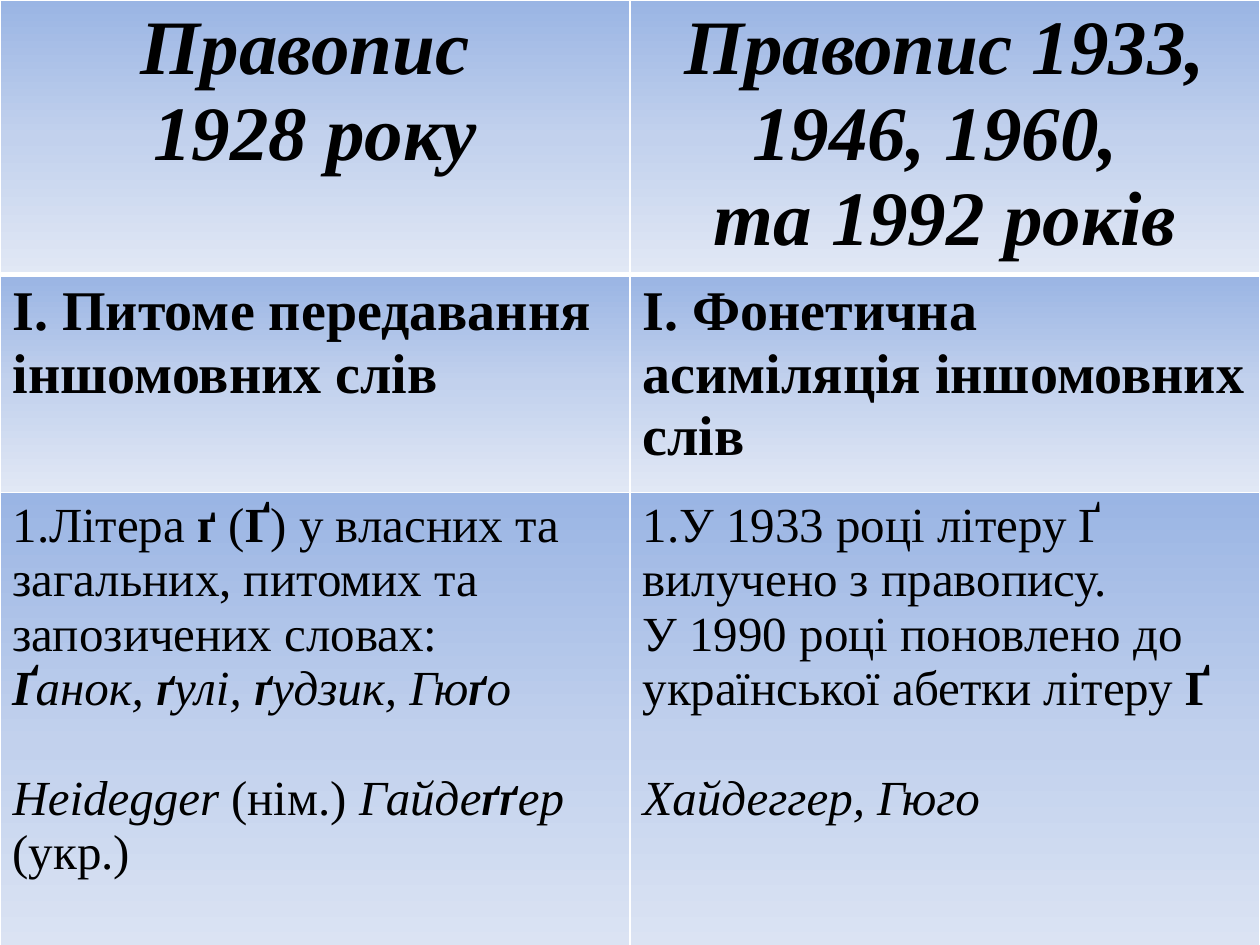
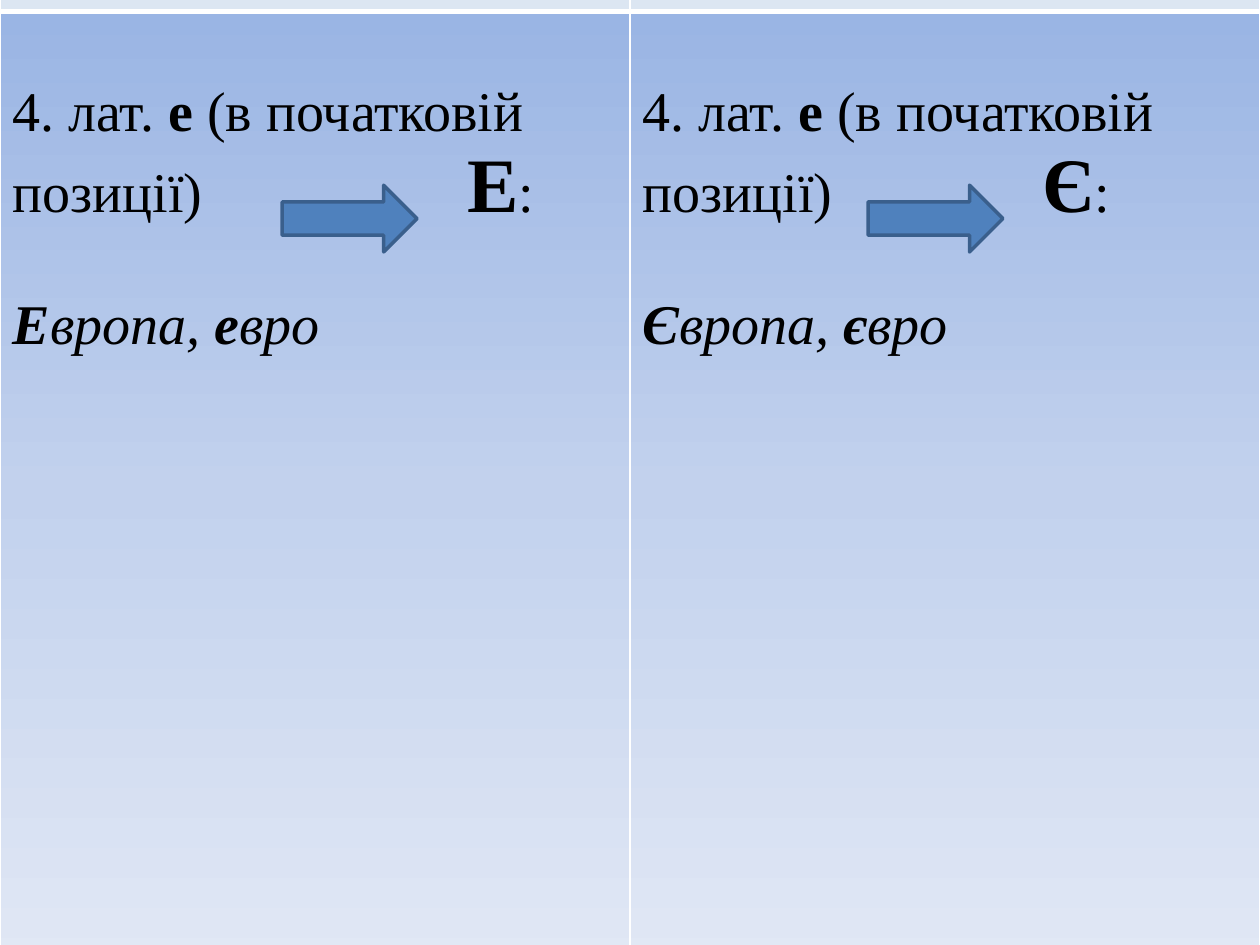
from lxml import etree
from pptx import Presentation
from pptx.dml.color import RGBColor
from pptx.enum.shapes import MSO_SHAPE
from pptx.enum.text import PP_ALIGN
from pptx.oxml import parse_xml
from pptx.util import Inches, Pt

ARROW = MSO_SHAPE.RIGHT_ARROW
CENTER = PP_ALIGN.CENTER
A = "http://schemas.openxmlformats.org/drawingml/2006/main"
FONT = "Times New Roman"
WHITE, BLACK = "FFFFFF", "000000"
BLUE, DARK_BLUE, PALE_BLUE = "4F81BD", "3A5F8C", "DCE6F2"
GRADIENT = [(0, "9AB5E4"), (50, "C2D1ED"), (100, "E1E8F5")]
WIDTH, HEIGHT = 10, 7.5
COL = WIDTH / 2
MARGIN = 0.1
PLAIN, BOLD, ITALIC = {}, {"bold": True}, {"italic": True}
BOLD_ITALIC = {"bold": True, "italic": True}
BIG = {"bold": True, "size": 44}


def write(p, text, size=28, bold=False, italic=False, color=BLACK):
    r = p.add_run()
    r.text = text
    r.font.name, r.font.size = FONT, Pt(size)
    r.font.bold, r.font.italic = bold, italic
    r.font.color.rgb = RGBColor.from_string(color)


def add_grid(s, top, row_heights, plain_header=False):
    """Two-column table with white rules, the thickest below the first row."""
    table = s.shapes.add_table(len(row_heights), 2, 0, Inches(top), Inches(WIDTH),
                               Inches(sum(row_heights))).table
    table.first_row = table.horz_banding = False
    for col in table.columns:
        col.width = Inches(COL)
    for i, height in enumerate(row_heights):
        table.rows[i].height = Inches(height)
        for cell in table.rows[i].cells:
            tc_pr = cell._tc.get_or_add_tcPr()
            for side in "LRTB":
                thick = (i, side) in ((0, "B"), (1, "T"))
                tc_pr.append(parse_xml(
                    f'<a:ln{side} xmlns:a="{A}" w="{Pt(3 if thick else 1)}"><a:solidFill>'
                    f'<a:srgbClr val="{WHITE}"/></a:solidFill></a:ln{side}>'))
            if plain_header and i == 0:
                cell.fill.solid()
                cell.fill.fore_color.rgb = RGBColor.from_string(PALE_BLUE)
            else:
                stops = "".join(f'<a:gs pos="{pos * 1000}"><a:srgbClr val="{color}"/></a:gs>'
                                for pos, color in GRADIENT)
                tc_pr.append(parse_xml(
                    f'<a:gradFill xmlns:a="{A}" rotWithShape="1"><a:gsLst>{stops}</a:gsLst>'
                    '<a:lin ang="5400000" scaled="0"/></a:gradFill>'))
    return table


prs = Presentation()
prs.slide_width, prs.slide_height = Inches(WIDTH), Inches(HEIGHT)
blank = prs.slide_layouts[6]

# Slide 1: spelling rules side by side
s = prs.slides.add_slide(blank)
table = add_grid(s, 0, [2.18, 1.73, 3.99])

headers = [["Правопис ", "1928 року"],
           ["Правопис 1933, 1946, 1960, ", "та 1992 років"]]
principles = ["І. Питоме передавання іншомовних слів",
              "І. Фонетична асиміляція іншомовних слів"]
letter_rules = [
    [[("Літера ", PLAIN), ("ґ", BOLD), (" (", PLAIN), ("Ґ", BOLD),
      (") у власних та загальних, питомих та запозичених словах:", PLAIN)],
     [("Ґ", BOLD_ITALIC), ("анок, ", ITALIC), ("ґ", BOLD_ITALIC), ("улі, ", ITALIC),
      ("ґ", BOLD_ITALIC), ("удзик, Гю", ITALIC), ("ґ", BOLD_ITALIC), ("о", ITALIC)],
     [("Heidegger ", ITALIC), ("(нім.) ", PLAIN), ("Гайде", ITALIC),
      ("ґґ", BOLD_ITALIC), ("ер", ITALIC), (" (укр.)", PLAIN)]],
    [[("У 1933 році літеру Ґ вилучено з правопису.", PLAIN)],
     [("У 1990 році поновлено до української абетки літеру ", PLAIN), ("Ґ", BOLD)],
     [("Хайдеггер, Гюго", ITALIC)]],
]
for c in range(2):
    tf = table.cell(0, c).text_frame
    for i, line in enumerate(headers[c]):
        p = tf.add_paragraph() if i else tf.paragraphs[0]
        p.alignment = CENTER
        write(p, line, size=44, bold=True, italic=True)

    write(table.cell(1, c).text_frame.paragraphs[0], principles[c], size=32, bold=True)

    tf = table.cell(2, c).text_frame
    for i, runs in enumerate(letter_rules[c]):
        p = tf.add_paragraph() if i else tf.paragraphs[0]
        for text, style in runs:
            write(p, text, **style)
    numbered = tf.paragraphs[0]._p.get_or_add_pPr()
    numbered.set("marL", "0")
    numbered.set("indent", "0")
    etree.SubElement(numbered, f"{{{A}}}buAutoNum", type="arabicPeriod")
    tf.paragraphs[-1].space_before = Pt(32)

# Slide 2: the initial letter of Latin "e" words
s = prs.slides.add_slide(blank)
table = add_grid(s, -0.5, [0.59, 7.59], plain_header=True)

# initial letter, its lower case, letter position and arrow position in the column
initials = [("Е", "е", 3.71, 2.24), ("Є", "є", 3.27, 1.89)]
for c, (upper, lower, letter_x, arrow_x) in enumerate(initials):
    cell = table.cell(1, c)
    cell.margin_top = Inches(0.56)
    tf = cell.text_frame
    p = tf.paragraphs[0]
    tabs = etree.SubElement(p._p.get_or_add_pPr(), f"{{{A}}}tabLst")
    etree.SubElement(tabs, f"{{{A}}}tab", pos=str(Inches(letter_x - MARGIN)), algn="l")
    for text, style in [("4. лат. ", PLAIN), ("е", BOLD),
                        (" (в початковій позиції)\t", PLAIN), (upper, BIG), (":", PLAIN)]:
        write(p, text, **{"size": 32, **style})

    p = tf.add_paragraph()
    p.space_before = Pt(37)
    for text, style in [(upper, BOLD_ITALIC), ("вропа, ", ITALIC),
                        (lower, BOLD_ITALIC), ("вро", ITALIC)]:
        write(p, text, size=32, **style)

    arrow = s.shapes.add_shape(ARROW, Inches(c * COL + arrow_x), Inches(1.47),
                               Inches(1.07), Inches(0.53))
    arrow.shadow.inherit = False
    arrow.fill.solid()
    arrow.fill.fore_color.rgb = RGBColor.from_string(BLUE)
    arrow.line.color.rgb = RGBColor.from_string(DARK_BLUE)
    arrow.line.width = Pt(2)

prs.save("out.pptx")
